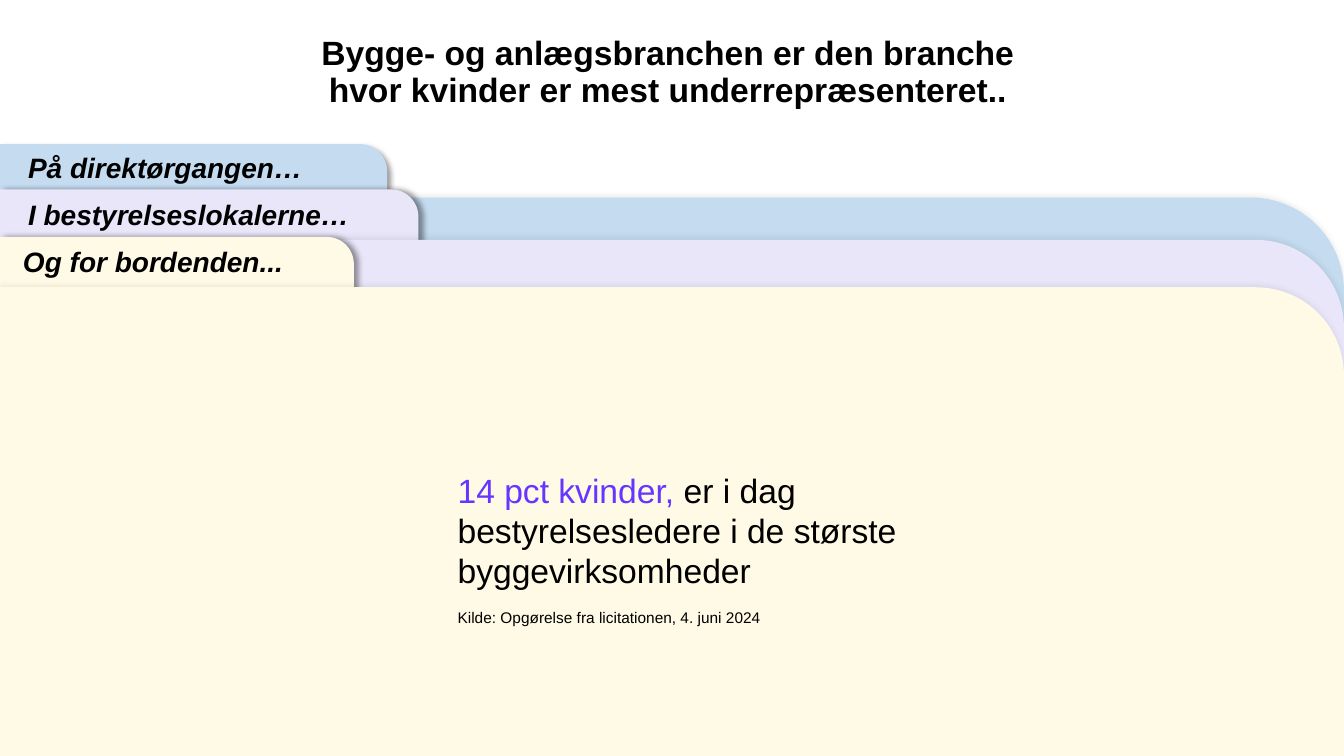
from dataclasses import dataclass

from lxml.etree import SubElement
from pptx import Presentation
from pptx.dml.color import RGBColor
from pptx.enum.shapes import MSO_SHAPE as Preset
from pptx.enum.text import MSO_ANCHOR as Anchor, MSO_AUTO_SIZE as AutoSize, PP_ALIGN as Align
from pptx.oxml.ns import qn
from pptx.util import Inches, Pt


@dataclass(frozen=True)
class Theme:
    """Colours, font and type sizes of the slide."""
    font: str = "Arial"
    black: str = "000000"
    accent: str = "6635FF"
    blue: str = "C4DBF0"
    lilac: str = "EAE6FA"
    cream: str = "FEFAE6"
    heading: int = 24
    label: int = 20
    source: int = 11


THEME = Theme()
SLIDE_WIDTH = 13.33


def add_shadow(shape, opacity, blur, distance, angle):
    """Give a shape a soft black outer shadow."""
    shape.shadow.inherit = False
    effects = shape._element.spPr.find(qn("a:effectLst"))
    outer = SubElement(effects, qn("a:outerShdw"), blurRad=str(Pt(blur)), dist=str(Pt(distance)),
                       dir=str(angle * 60000), algn="tl", rotWithShape="0")
    colour = SubElement(outer, qn("a:srgbClr"), val=THEME.black)
    SubElement(colour, qn("a:alpha"), val=str(opacity * 1000))


def add_sheet(slide, left, top, width, height, colour, shadow, corner=None):
    """Draw a borderless sheet with its upper right corner rounded."""
    sheet = slide.shapes.add_shape(Preset.ROUND_1_RECTANGLE, Inches(left), Inches(top),
                                   Inches(width), Inches(height))
    if corner is not None:
        sheet.adjustments[0] = corner
    sheet.fill.solid()
    sheet.fill.fore_color.rgb = RGBColor.from_string(colour)
    sheet.line.fill.background()
    add_shadow(sheet, *shadow)


def add_text_frame(slide, left, top, width, height, auto_size=AutoSize.SHAPE_TO_FIT_TEXT):
    """Add a wrapping text box and return its text frame."""
    frame = slide.shapes.add_textbox(Inches(left), Inches(top), Inches(width), Inches(height)).text_frame
    frame.word_wrap = True
    frame.auto_size = auto_size
    return frame


def style(font, size, colour=THEME.black, bold=False, italic=False):
    """Set the typeface, size, colour and emphasis of a font."""
    font.name, font.size, font.bold, font.italic = THEME.font, Pt(size), bold, italic
    font.color.rgb = RGBColor.from_string(colour)


def add_folder(slide, tab_top, tab_width, tab_angle, body_top, body_height, colour, label, label_box):
    """Draw one folder: a labelled tab and the body below it."""
    add_sheet(slide, 0, tab_top, tab_width, 0.54, colour, (40, 4, 3, tab_angle), corner=0.5)
    heading = add_text_frame(slide, *label_box, 0.44).paragraphs[0]
    heading.text = label
    style(heading.font, THEME.label, bold=True, italic=True)
    add_sheet(slide, 0, body_top, SLIDE_WIDTH, body_height, colour, (11, 5, 0, 0))


def add_finding(slide):
    """Write the key figure and its source."""
    frame = add_text_frame(slide, 4.44, 4.61, 4.58, 1.72)
    finding = frame.paragraphs[0]
    for wording, colour in (("14 pct kvinder, ", THEME.accent),
                            ("er i dag bestyrelsesledere i de største byggevirksomheder", THEME.black)):
        run = finding.add_run()
        run.text = wording
        style(run.font, THEME.heading, colour)
    source = frame.add_paragraph()
    source.text = "Kilde: Opgørelse fra licitationen, 4. juni 2024"
    source.space_before = Pt(12.5)
    style(source.font, THEME.source)


def add_title(slide):
    """Write the centred two-line title."""
    frame = add_text_frame(slide, 0.92, 0.32, 11.5, 0.81, AutoSize.NONE)
    frame.vertical_anchor = Anchor.MIDDLE
    title = frame.paragraphs[0]
    title.text = "Bygge- og anlægsbranchen er den branche \vhvor kvinder er mest underrepræsenteret.. "
    title.alignment = Align.CENTER
    title.line_spacing = 0.9
    style(title.font, THEME.heading, bold=True)


def main():
    """Build the slide and save it."""
    deck = Presentation()
    deck.slide_width, deck.slide_height = Inches(SLIDE_WIDTH), Inches(7.5)
    slide = deck.slides.add_slide(deck.slide_layouts[6])
    add_folder(slide, 1.43, 3.84, 45, 1.96, 5.56, THEME.blue, "På direktørgangen…", (0.18, 1.44, 3.17))
    add_folder(slide, 1.88, 4.15, 0, 2.38, 5.23, THEME.lilac, "I bestyrelseslokalerne…", (0.18, 1.91, 3.84))
    add_folder(slide, 2.35, 3.51, 0, 2.85, 5.23, THEME.cream, "Og for bordenden...", (0.13, 2.38, 3.84))
    add_finding(slide)
    add_title(slide)
    deck.save("out.pptx")


if __name__ == "__main__":
    main()
